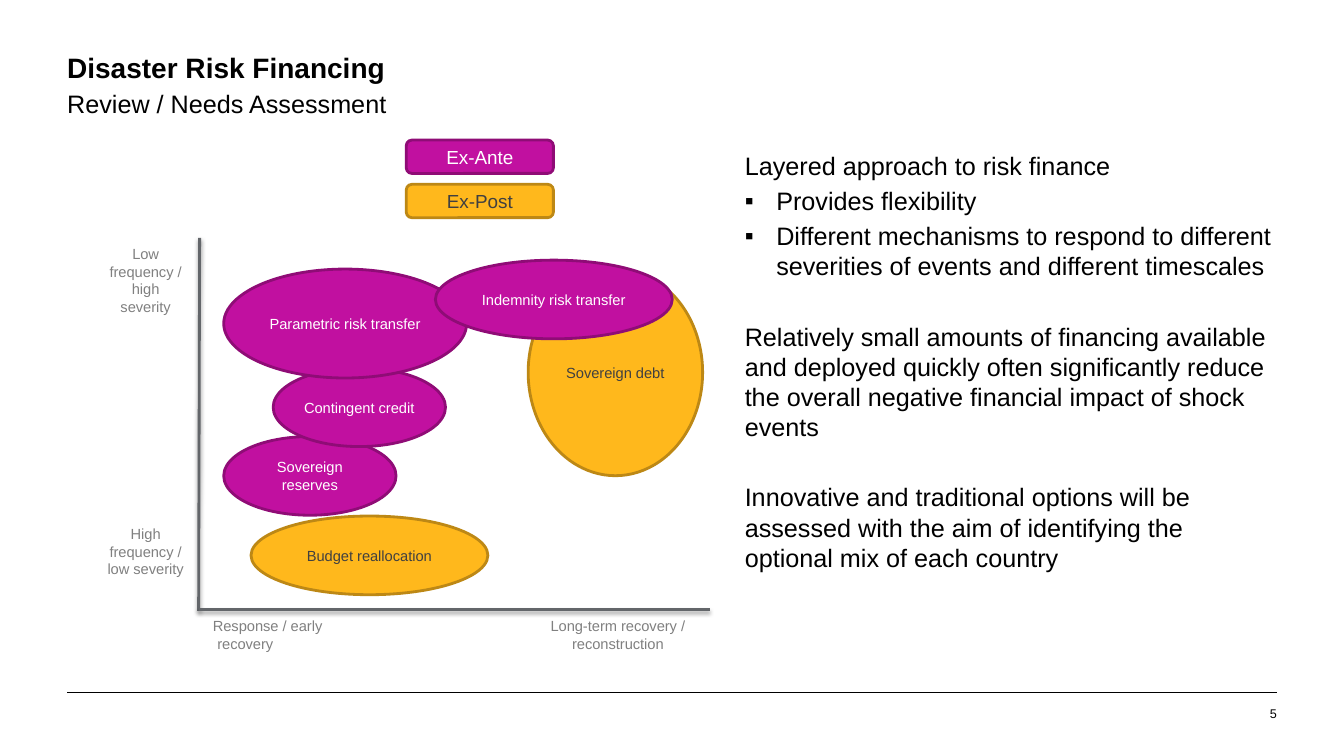
from lxml.etree import SubElement
from pptx import Presentation
from pptx.dml.color import RGBColor
from pptx.enum.shapes import MSO_CONNECTOR, MSO_SHAPE
from pptx.enum.text import MSO_ANCHOR, PP_ALIGN
from pptx.oxml.ns import qn
from pptx.util import Pt

EX_ANTE = ("C110A0", "8F0C76", "FFFFFF")
EX_POST = ("FFB81C", "BD8815", "404040")
BLACK, GREY, AXIS = "000000", "808080", "63666A"
BUBBLES_BEHIND = [
    ("Sovereign debt", EX_POST, (377.3, 192.2, 124.6, 147.6)),
    ("Sovereign reserves", EX_ANTE, (159.8, 311.8, 123.1, 56.2)),
    ("Contingent credit", EX_ANTE, (195.1, 262.8, 123.1, 56.2)),
]
BUBBLES_IN_FRONT = [
    ("Parametric risk transfer", EX_ANTE, (159.8, 192.2, 173.5, 77.8)),
    ("Budget reallocation", EX_POST, (179.3, 368.6, 169.2, 56.2)),
    ("Indemnity risk transfer", EX_ANTE, (311, 185.8, 169.2, 56.2)),
]
AXIS_LABELS = [
    ("Response / early recovery\t", (142.6, 437, 97.2, 36.7)),
    ("Long-term recovery / reconstruction", (377.3, 437, 128.2, 36.7)),
    ("Low frequency / high severity\t", (67.7, 171.4, 72.7, 79.2)),
    ("High frequency / low severity", (67.7, 371.5, 72.7, 65.5)),
]
MESSAGES = [
    ("Layered approach to risk finance", False, 0),
    ("Provides flexibility", True, 0),
    ("Different mechanisms to respond to different severities of events "
     "and different timescales", True, 0),
    ("Relatively small amounts of financing available and deployed quickly often "
     "significantly reduce the overall negative financial impact of shock events", False, 25),
    ("Innovative and traditional options will be assessed with the aim of "
     "identifying the optional mix of each country", False, 25),
]


def color(hex_code):
    return RGBColor.from_string(hex_code)


def points(box):
    return [Pt(length) for length in box]


def style(paragraph, size, text_color, align=PP_ALIGN.LEFT, bold=False):
    paragraph.alignment = align
    paragraph.font.name = "Arial"
    paragraph.font.size = Pt(size)
    paragraph.font.bold = bold
    paragraph.font.color.rgb = color(text_color)


def set_margins(frame, horizontal, vertical):
    frame.margin_left = frame.margin_right = Pt(horizontal)
    frame.margin_top = frame.margin_bottom = Pt(vertical)


def add_frame(slide, box, horizontal=0, vertical=0):
    frame = slide.shapes.add_textbox(*points(box)).text_frame
    frame.word_wrap = True
    set_margins(frame, horizontal, vertical)
    return frame


def add_text(slide, text, box, size, text_color=BLACK, align=PP_ALIGN.LEFT,
             bold=False, margins=(0, 0)):
    frame = add_frame(slide, box, *margins)
    frame.text = text
    style(frame.paragraphs[0], size, text_color, align, bold)
    return frame


def add_filled(slide, preset, text, scheme, box, size):
    fill, outline, text_color = scheme
    shape = slide.shapes.add_shape(preset, *points(box))
    shape.shadow.inherit = False
    shape.fill.solid()
    shape.fill.fore_color.rgb = color(fill)
    shape.line.color.rgb = color(outline)
    shape.line.width = Pt(2)
    frame = shape.text_frame
    frame.word_wrap = True
    frame.vertical_anchor = MSO_ANCHOR.MIDDLE
    set_margins(frame, 0, 0)
    frame.text = text
    style(frame.paragraphs[0], size, text_color, PP_ALIGN.CENTER)


def add_line(slide, ends, line_color, width, shadow=False):
    line = slide.shapes.add_connector(MSO_CONNECTOR.STRAIGHT, *points(ends))
    line.line.color.rgb = color(line_color)
    line.line.width = Pt(width)
    effects = SubElement(line._element.spPr, qn("a:effectLst"))
    if shadow:
        outer = SubElement(effects, qn("a:outerShdw"), blurRad=str(Pt(3.1)),
                           dist=str(Pt(1.6)), dir="5400000", rotWithShape="0")
        black = SubElement(outer, qn("a:srgbClr"), val=BLACK)
        SubElement(black, qn("a:alpha"), val="38000")


def add_bullet(paragraph):
    properties = paragraph._p.get_or_add_pPr()
    properties.set("marL", str(Pt(22.5)))
    properties.set("indent", str(Pt(-22.5)))
    SubElement(properties, qn("a:buFont"), typeface="Arial")
    SubElement(properties, qn("a:buChar"), char="▪")


def add_messages(slide):
    frame = add_frame(slide, (532, 107.3, 378.7, 350))
    for index, (text, bulleted, gap) in enumerate(MESSAGES):
        paragraph = frame.add_paragraph() if index else frame.paragraphs[0]
        paragraph.text = text
        if bulleted:
            add_bullet(paragraph)
        if gap:
            paragraph.space_before = Pt(gap)
        paragraph.space_after = Pt(3.5)
        style(paragraph, 18, BLACK)


def add_bubbles(slide, bubbles):
    for text, scheme, box in bubbles:
        add_filled(slide, MSO_SHAPE.OVAL, text, scheme, box, 10.5)


def add_diagram(slide):
    add_bubbles(slide, BUBBLES_BEHIND)
    add_line(slide, (142.6, 170, 141.9, 436.3), AXIS, 2, shadow=True)
    add_line(slide, (506.9, 435.6, 141.9, 435.6), AXIS, 2, shadow=True)
    add_bubbles(slide, BUBBLES_IN_FRONT)
    for text, box in AXIS_LABELS:
        add_text(slide, text, box, 10.5, GREY, PP_ALIGN.CENTER, margins=(7.2, 3.6))
    for row, (text, scheme) in enumerate((("Ex-Ante", EX_ANTE), ("Ex-Post", EX_POST))):
        add_filled(slide, MSO_SHAPE.ROUNDED_RECTANGLE, text, scheme,
                   (290.2, 100.1 + row * 31.6, 105.1, 23.8), 13.5)


def main():
    deck = Presentation()
    deck.slide_width, deck.slide_height = Pt(960), Pt(540)
    slide = deck.slides.add_slide(deck.slide_layouts[6])
    add_line(slide, (48, 494.6, 912, 494.6), BLACK, 0.25)
    add_text(slide, "Disaster Risk Financing", (48, 36, 864, 24.5), 20, bold=True)
    add_text(slide, "Review / Needs Assessment", (48, 63.4, 864, 21.6), 18)
    page_number = add_text(slide, "5", (872, 504, 40, 10.8), 9, align=PP_ALIGN.RIGHT)
    page_number.vertical_anchor = MSO_ANCHOR.BOTTOM
    add_diagram(slide)
    add_messages(slide)
    deck.save("out.pptx")


if __name__ == "__main__":
    main()
